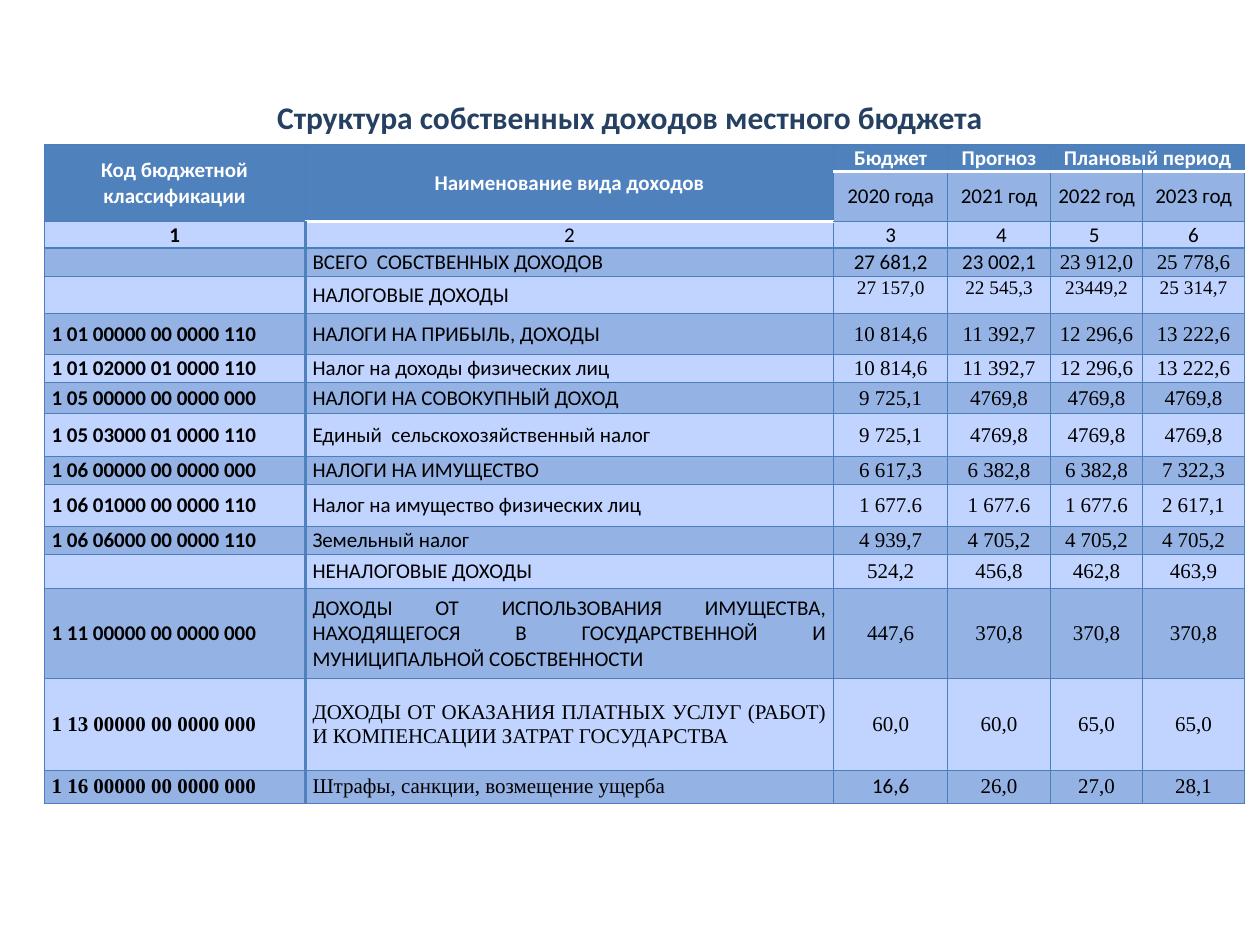
from dataclasses import dataclass
from typing import Any

from lxml.etree import SubElement
from pptx import Presentation
from pptx.dml.color import RGBColor
from pptx.enum.text import MSO_ANCHOR as Anchor, PP_ALIGN as Align
from pptx.oxml.ns import qn
from pptx.util import Cm, Pt

SANS, SERIF = "Calibri", "Times New Roman"
COLUMN_WIDTHS = (5.26, 10.66, 2.29, 2.08, 1.85, 2.06)
HEADER_HEIGHTS = (0.53, 1.02, 0.53)
GROUPS = ("Код бюджетной классификации", "Наименование вида доходов",
          "Бюджет", "Прогноз", "Плановый период")
YEARS = ("2020 года", "2021 год", "2022 год", "2023 год")
NUMBERS = ("1", "2", "3", " 4", "5 ", "6")

# Row height, classification code, income name, amounts for 2020-2023
INCOMES = (
    (0.58, "", "ВСЕГО  СОБСТВЕННЫХ ДОХОДОВ",
     ("27 681,2", "23 002,1", "23 912,0", "25 778,6")),
    (0.74, "", "НАЛОГОВЫЕ ДОХОДЫ",
     ("27 157,0", "22 545,3", "23449,2", "25 314,7")),
    (0.83, "1 01 00000 00 0000 110", "НАЛОГИ НА ПРИБЫЛЬ, ДОХОДЫ",
     ("10 814,6", "11 392,7", "12 296,6", "13 222,6")),
    (0.56, "1 01 02000 01 0000 110", "Налог на доходы физических лиц",
     ("10 814,6", "11 392,7", "12 296,6", "13 222,6")),
    (0.63, "1 05 00000 00 0000 000", "НАЛОГИ НА СОВОКУПНЫЙ ДОХОД",
     ("9 725,1", "4769,8", "4769,8", "4769,8")),
    (0.86, "1 05 03000 01 0000 110", "Единый  сельскохозяйственный налог",
     ("9 725,1", "4769,8", "4769,8", "4769,8")),
    (0.56, "1 06 00000 00 0000 000", "НАЛОГИ НА ИМУЩЕСТВО",
     ("6 617,3", "6 382,8", "6 382,8", "7 322,3")),
    (0.86, "1 06 01000 00 0000 110", "Налог на имущество физических лиц",
     ("1 677.6", "1 677.6", "1 677.6", "2 617,1")),
    (0.56, "1 06 06000 00 0000 110", "Земельный налог",
     ("4 939,7", "4 705,2", "4 705,2", "4 705,2")),
    (0.69, "", "НЕНАЛОГОВЫЕ ДОХОДЫ",
     ("524,2", "456,8", "462,8", "463,9")),
    (1.81, "1 11 00000 00 0000 000",
     "ДОХОДЫ ОТ ИСПОЛЬЗОВАНИЯ ИМУЩЕСТВА, НАХОДЯЩЕГОСЯ В ГОСУДАРСТВЕННОЙ "
     "И МУНИЦИПАЛЬНОЙ СОБСТВЕННОСТИ",
     ("447,6", "370,8", "370,8", "370,8")),
    (1.85, "1 13 00000 00 0000 000",
     "ДОХОДЫ ОТ ОКАЗАНИЯ ПЛАТНЫХ УСЛУГ (РАБОТ) И КОМПЕНСАЦИИ ЗАТРАТ "
     "ГОСУДАРСТВА",
     ("60,0", "60,0", "65,0", "65,0")),
    (0.66, "1 16 00000 00 0000 000", "Штрафы, санкции, возмещение ущерба",
     ("16,6", "26,0", "27,0", "28,1")),
)
TOTAL, TAXES, SERVICES, FINES = 0, 1, 11, 12
SANS_AMOUNTS = {(TOTAL, 0), (TOTAL, 1), (FINES, 0)}


def rgb(hex_code):
    return RGBColor.from_string(hex_code)


def write(frame, text, size=12, font=SANS, color="000000", bold=False,
          align=Align.CENTER):
    paragraph = frame.paragraphs[0]
    paragraph.alignment = align
    if not text:
        # An empty cell keeps the text size, so that its row does not grow
        SubElement(paragraph._p, qn("a:endParaRPr"), sz=str(size * 100))
        return
    run = paragraph.add_run()
    run.text = text
    run.font.size, run.font.name, run.font.bold = Pt(size), font, bold
    run.font.color.rgb = rgb(color)


def draw_border(cell, side, color, width):
    line = SubElement(cell._tc.get_or_add_tcPr(), qn(f"a:ln{side}"),
                      w=str(Pt(width)))
    SubElement(SubElement(line, qn("a:solidFill")), qn("a:srgbClr"), val=color)


@dataclass
class BudgetSlide:
    slide: Any
    title_color: str = "254061"
    head: str = "4F81BD"
    dark: str = "94B2E4"
    light: str = "C0D4FF"
    grid: tuple = ("4B7EBC", 0.75)
    divider: tuple = ("4F81BD", 2)
    rule: tuple = ("FFFFFF", 2)

    def title(self, text, left, top, width, height):
        box = self.slide.shapes.add_textbox(Cm(left), Cm(top), Cm(width), Cm(height))
        box.text_frame.word_wrap = True
        box.text_frame.vertical_anchor = Anchor.MIDDLE
        write(box.text_frame, text, size=18, color=self.title_color, bold=True)

    def table(self, left, top, widths, heights):
        table = self.slide.shapes.add_table(
            len(heights), len(widths), Cm(left), Cm(top),
            Cm(sum(widths)), Cm(sum(heights))).table
        table.first_row = table.horz_banding = False
        for column, width in zip(table.columns, widths):
            column.width = Cm(width)
        for row, height in zip(table.rows, heights):
            row.height = Cm(height)
        return table

    def borders(self, row, column):
        """Return the cell's borders in the order the file format needs."""
        sides = dict.fromkeys("LRTB", self.grid)
        if row >= 2 and column == 0:
            sides["R"] = self.divider
        if row >= 2 and column == 1:
            sides["L"] = self.divider
        if column == 1 and row < 2 or column > 1 and row == 0:
            sides["B"] = self.rule
        if (row, column) == (2, 1) or column > 1 and row == 1:
            sides["T"] = self.rule
        return sides

    def cell(self, table, row, column, text="", fill=None, anchor=Anchor.MIDDLE,
             inset=0.15, **text_format):
        cell = table.cell(row, column)
        cell.margin_left = cell.margin_right = Cm(inset)
        cell.margin_top = cell.margin_bottom = 0
        cell.vertical_anchor = anchor
        for side, border in self.borders(row, column).items():
            draw_border(cell, side, *border)
        cell.fill.solid()
        cell.fill.fore_color.rgb = rgb(fill)
        write(cell.text_frame, text, **text_format)

    def header(self, table):
        for column in range(len(COLUMN_WIDTHS)):
            group = GROUPS[column] if column < len(GROUPS) else ""
            self.cell(table, 0, column, group, self.head, color="FFFFFF", bold=True,
                      anchor=Anchor.BOTTOM if column > 2 else Anchor.MIDDLE)
            year, fill = (YEARS[column - 2], self.dark) if column > 1 else ("", self.head)
            self.cell(table, 1, column, year, fill)
            self.cell(table, 2, column, NUMBERS[column], self.light,
                      anchor=Anchor.BOTTOM, bold=column == 0)
        for column in (0, 1):
            table.cell(0, column).merge(table.cell(1, column))
        table.cell(0, 4).merge(table.cell(0, 5))

    def income(self, table, index, code, name, amounts):
        row = index + len(HEADER_HEIGHTS)
        fill = self.light if index % 2 else self.dark
        label_font = SERIF if index >= SERVICES else SANS
        for column, label in enumerate((code, name)):
            self.cell(table, row, column, label, fill, font=label_font,
                      bold=column == 0, align=Align.JUSTIFY)
        amount_format = {}
        if index == TAXES:
            amount_format = dict(size=11, anchor=Anchor.TOP, inset=0.18)
        elif TAXES < index < SERVICES:
            amount_format = dict(inset=0.03)
        for year, amount in enumerate(amounts):
            font = SANS if (index, year) in SANS_AMOUNTS else SERIF
            self.cell(table, row, year + 2, amount, fill, font=font, **amount_format)


def main():
    deck = Presentation()
    deck.slide_width, deck.slide_height = Cm(25.4), Cm(19.05)
    budget = BudgetSlide(deck.slides.add_slide(deck.slide_layouts[6]))
    budget.title("Структура собственных доходов местного бюджета",
                 1.27, 0.76, 22.86, 3.18)
    heights = HEADER_HEIGHTS + tuple(income[0] for income in INCOMES)
    table = budget.table(0.89, 2.92, COLUMN_WIDTHS, heights)
    budget.header(table)
    for index, (_, code, name, amounts) in enumerate(INCOMES):
        budget.income(table, index, code, name, amounts)
    deck.save("out.pptx")


if __name__ == "__main__":
    main()
